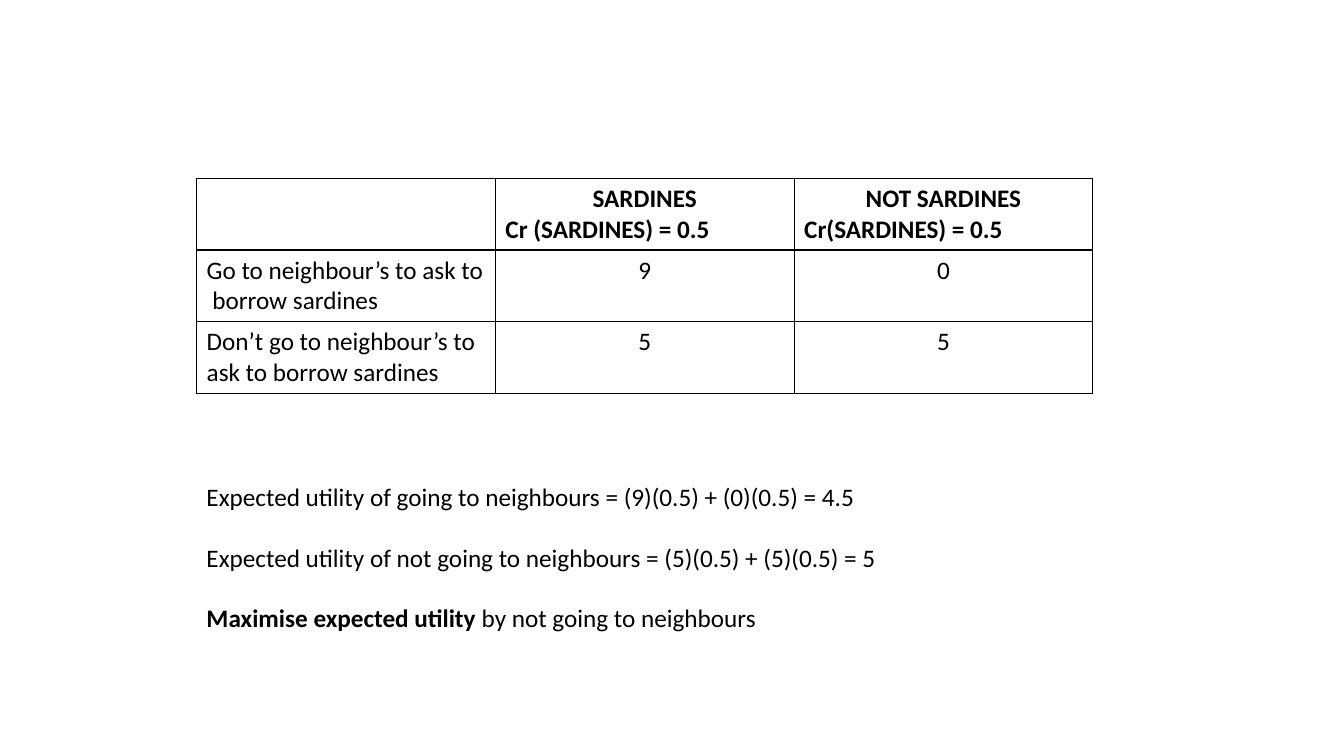
import lxml.etree
import pptx
import pptx.dml.color
import pptx.enum.text
import pptx.oxml.ns
import pptx.util

WIDTH, HEIGHT = 13.33, 7.5
FONT, SIZE, BLACK = "Calibri", 18, "000000"

UTILITIES = [
    ["", "SARDINES\nCr (SARDINES) = 0.5", "NOT SARDINES\nCr(SARDINES) = 0.5"],
    ["Go to neighbour’s to ask to  borrow sardines", "9", "0"],
    ["Don’t go to neighbour’s to ask to borrow sardines", "5", "5"],
]
CONCLUSIONS = [
    [("Expected utility of going to neighbours = (9)(0.5) + (0)(0.5) = 4.5", False)],
    [("Expected utility of not going to neighbours = (5)(0.5) + (5)(0.5) = 5", False)],
    [("Maximise expected utility", True), (" by not going to neighbours", False)],
]


def rgb(color):
    return pptx.dml.color.RGBColor.from_string(color)


def format_font(font, bold=False):
    font.name = FONT
    font.size = pptx.util.Pt(SIZE)
    font.bold = bold
    font.color.rgb = rgb(BLACK)


def set_borders(cell, color, points):
    tcPr = cell._tc.get_or_add_tcPr()
    for i, side in enumerate(("lnL", "lnR", "lnT", "lnB")):
        ln = lxml.etree.Element(pptx.oxml.ns.qn(f"a:{side}"), w=str(pptx.util.Pt(points)))
        fill = lxml.etree.SubElement(ln, pptx.oxml.ns.qn("a:solidFill"))
        lxml.etree.SubElement(fill, pptx.oxml.ns.qn("a:srgbClr"), val=color)
        tcPr.insert(i, ln)


def add_utility_table(s, left, top, width, height):
    rows, cols = len(UTILITIES), len(UTILITIES[0])
    box = [pptx.util.Inches(v) for v in (left, top, width, height)]
    table = s.shapes.add_table(rows, cols, *box).table
    table.first_row = False
    table.horz_banding = False
    for r_index, row in enumerate(UTILITIES):
        for c_index, text in enumerate(row):
            cell = table.cell(r_index, c_index)
            cell.fill.background()
            set_borders(cell, BLACK, 1)
            cell.text_frame.text = text
            for p in cell.text_frame.paragraphs:
                format_font(p.font, bold=r_index == 0)
                for r in p.runs:
                    format_font(r.font, bold=r_index == 0)
            if c_index > 0:
                cell.text_frame.paragraphs[0].alignment = pptx.enum.text.PP_ALIGN.CENTER


def add_conclusions(s, left, top, width, height):
    box = [pptx.util.Inches(v) for v in (left, top, width, height)]
    tf = s.shapes.add_textbox(*box).text_frame
    tf.word_wrap = True
    tf.auto_size = pptx.enum.text.MSO_AUTO_SIZE.SHAPE_TO_FIT_TEXT
    for i, parts in enumerate(CONCLUSIONS):
        p = tf.add_paragraph() if i else tf.paragraphs[0]
        if i:
            p.space_before = pptx.util.Pt(21.5)
        for text, bold in parts:
            r = p.add_run()
            r.text = text
            format_font(r.font, bold)


def main():
    prs = pptx.Presentation()
    prs.slide_width = pptx.util.Inches(WIDTH)
    prs.slide_height = pptx.util.Inches(HEIGHT)
    s = prs.slides.add_slide(prs.slide_layouts[6])
    left = 1.95
    add_utility_table(s, left, 1.77, 8.89, 2.13)
    add_conclusions(s, left, 4.73, 9.13, 1.62)
    prs.save("out.pptx")


if __name__ == "__main__":
    main()
